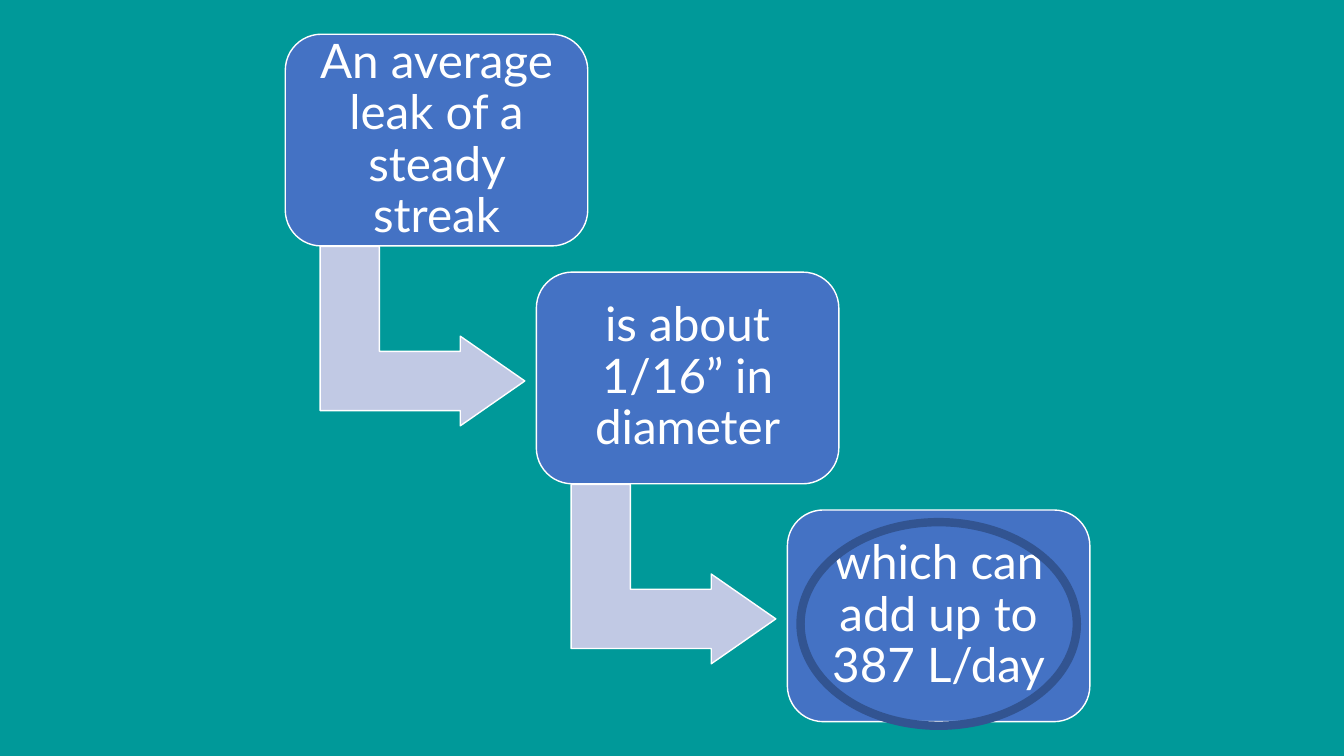
from pptx import Presentation
from pptx.dml.color import RGBColor as Rgb
from pptx.enum.shapes import MSO_SHAPE as Kind
from pptx.enum.text import MSO_ANCHOR as Anchor, PP_ALIGN as Align
from pptx.util import Inches, Pt

HUES = {"back": "009999", "box": "4472C4", "arrow": "C1C9E4",
        "white": "FFFFFF", "ring": "325491"}
STEPS = ["An average leak of a steady streak",
         "is about 1/16” in diameter",
         "which can add up to 387 L/day"]
LEFT, TOP = 2.83, 0.34
RIGHT, DOWN = 2.49, 2.36


def draw(kind, x, y, w, h, fill, line, width):
    shape = deck.shapes.add_shape(kind, Inches(x), Inches(y), Inches(w), Inches(h))
    shape.shadow.inherit = False
    if fill:
        shape.fill.solid()
        shape.fill.fore_color.rgb = Rgb.from_string(HUES[fill])
    else:
        shape.fill.background()
    shape.line.color.rgb = Rgb.from_string(HUES[line])
    shape.line.width = Pt(width)
    return shape


def write(shape, text, size=34, font="Lato", hue="white", inset=0.14):
    frame = shape.text_frame
    frame.word_wrap = True
    frame.vertical_anchor = Anchor.MIDDLE
    frame.margin_left = frame.margin_right = Inches(inset)
    frame.margin_top = frame.margin_bottom = Inches(inset)
    para = frame.paragraphs[0]
    para.alignment = Align.CENTER
    para.line_spacing = 0.9
    run = para.add_run()
    run.text = text
    run.font.size = Pt(size)
    run.font.name = font
    run.font.color.rgb = Rgb.from_string(HUES[hue])


show = Presentation()
show.slide_width, show.slide_height = Inches(13.33), Inches(7.5)
deck = show.slides.add_slide(show.slide_layouts[6])
deck.background.fill.solid()
deck.background.fill.fore_color.rgb = Rgb.from_string(HUES["back"])

for i, text in enumerate(STEPS):
    x, y = LEFT + i * RIGHT, TOP + i * DOWN
    if i < len(STEPS) - 1:
        arrow = draw(Kind.BENT_UP_ARROW, x + 0.47, y + 1.98, 1.78, 2.03, "arrow", "white", 1)
        arrow.rotation = 90
        for n, part in enumerate([0.33, 0.25, 0.36]):
            arrow.adjustments[n] = part
    box = draw(Kind.ROUNDED_RECTANGLE, x, y, 3, 2.1, "box", "white", 1)
    box.adjustments[0] = 0.17
    write(box, text)

draw(Kind.OVAL, 7.94, 5.18, 2.74, 2.02, None, "ring", 6)

show.save("out.pptx")
